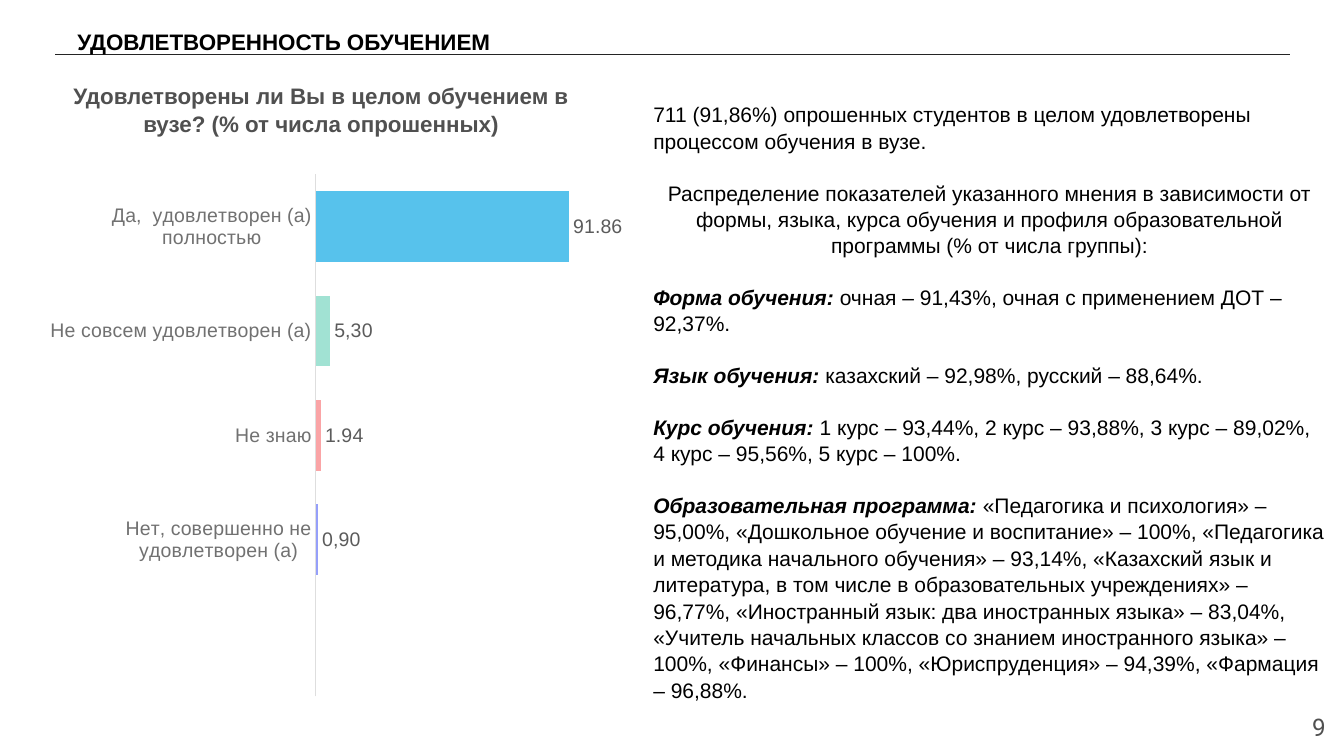
from dataclasses import dataclass

from lxml.etree import SubElement
from pptx import Presentation
from pptx.chart.data import CategoryChartData
from pptx.dml.color import RGBColor
from pptx.enum.chart import XL_CHART_TYPE as ChartType
from pptx.enum.chart import XL_LABEL_POSITION as LabelPosition
from pptx.enum.chart import XL_TICK_MARK as TickMark
from pptx.enum.shapes import MSO_CONNECTOR as Connector
from pptx.enum.text import MSO_ANCHOR as Anchor
from pptx.enum.text import PP_ALIGN as Align
from pptx.oxml.ns import qn
from pptx.util import Inches, Pt


@dataclass
class Span:
    text: str
    size: float = 15
    bold: bool = False
    italic: bool = False
    color: str = "000000"
    font: str = "Arial"


@dataclass
class Para:
    spans: list[Span]
    align: Align = Align.LEFT
    before: float = 0


@dataclass
class TextBlock:
    left: float
    top: float
    width: float
    height: float
    paras: list[Para]
    inset: float = 0.13
    anchor: Anchor = Anchor.TOP
    spacing: float = 1.05


@dataclass
class Bar:
    answer: str
    value: float | None
    color: str = ""
    label: str = ""


def rgb(value: str) -> RGBColor:
    return RGBColor.from_string(value)


def style_font(font, size: float, color: str, name: str = "Arial") -> None:
    font.size, font.name = Pt(size), name
    font.color.rgb = rgb(color)


def add_text(page, block: TextBlock) -> None:
    box = page.shapes.add_textbox(*map(Inches, (block.left, block.top, block.width, block.height)))
    frame = box.text_frame
    frame.word_wrap = True
    frame.vertical_anchor = block.anchor
    frame.margin_left = frame.margin_right = Inches(block.inset)
    frame.margin_top = frame.margin_bottom = Inches(min(block.inset, block.inset if block.inset > 0.1 else 0.05))
    for index, item in enumerate(block.paras):
        para = frame.paragraphs[0] if index == 0 else frame.add_paragraph()
        para.alignment = item.align
        para.line_spacing = block.spacing
        para.space_before = Pt(item.before)
        for span in item.spans:
            run = para.add_run()
            run.text = span.text
            style_font(run.font, span.size, span.color, span.font)
            run.font.bold, run.font.italic = span.bold, span.italic


def add_rule(page, left: float, right: float, y: float) -> None:
    rule = page.shapes.add_connector(Connector.STRAIGHT, *map(Inches, (left, y, right, y)))
    rule.line.color.rgb = rgb("242424")
    rule.line.width = Pt(0.75)
    SubElement(rule._element.spPr, qn("a:effectLst"))


def set_plot_layout(chart, **fractions: float) -> None:
    plot_area = chart._chartSpace.chart.plotArea
    layout = plot_area.find(qn("c:layout"))
    if layout is None:
        layout = SubElement(plot_area, qn("c:layout"))
        plot_area.insert(0, layout)
    manual = SubElement(layout, qn("c:manualLayout"))
    settings = {"layoutTarget": "inner", "xMode": "edge", "yMode": "edge", **fractions}
    for tag, value in settings.items():
        SubElement(manual, qn(f"c:{tag}")).set("val", str(value))


def add_bars(page, bars: list[Bar]) -> None:
    data = CategoryChartData()
    data.categories = [bar.answer for bar in bars]
    data.add_series("Series 1", [bar.value for bar in bars])
    chart = page.shapes.add_chart(
        ChartType.BAR_CLUSTERED, *map(Inches, (0.5, 1.67, 5.69, 5.33)), data
    ).chart
    chart.has_legend = chart.has_title = False
    style_font(chart.font, 10, "242424")
    set_plot_layout(chart, x=0.459, y=0.011, w=0.484, h=0.972)

    # Axes
    answers, scale = chart.category_axis, chart.value_axis
    answers.major_tick_mark = answers.minor_tick_mark = TickMark.NONE
    style_font(answers.tick_labels.font, 14, "717171")
    answers.format.line.color.rgb = rgb("DEDEDE")
    answers.format.line.width = Pt(0.75)
    scale.minimum_scale, scale.maximum_scale = 0, 100
    scale.has_major_gridlines = False
    scale.visible = False

    # Bars and their labels
    plot = chart.plots[0]
    plot.gap_width = 48
    plot.vary_by_categories = False
    series = plot.series[0]
    series.format.fill.solid()
    series.format.fill.fore_color.rgb = rgb("62CFB5")
    labels = series.data_labels
    labels.show_value = True
    labels.position = LabelPosition.OUTSIDE_END
    style_font(labels.font, 14, "5B5B5B")
    for index, bar in enumerate(bars):
        if bar.color:
            fill = series.points[index].format.fill
            fill.solid()
            fill.fore_color.rgb = rgb(bar.color)
        if bar.label:
            label = series.points[index].data_label
            run = label.text_frame.paragraphs[0].add_run()
            run.text = bar.label
            style_font(run.font, 14, "5B5B5B")
            label.position = LabelPosition.OUTSIDE_END


BARS = [
    Bar("", None),
    Bar("Нет, совершенно не удовлетворен (а)", 0.9, "959FFA", "0,90"),
    Bar("Не знаю", 1.94, "FAA4A6"),
    Bar("Не совсем удовлетворен (а)", 5.3, "A1E2D3", "5,30"),
    Bar("Да,  удовлетворен (а) полностью", 91.86, "57C2EC"),
]

GROUPS = {
    "Форма обучения: ": "очная – 91,43%, очная с применением ДОТ – 92,37%.",
    "Язык обучения: ": "казахский – 92,98%, русский – 88,64%.",
    "Курс обучения: ": "1 курс – 93,44%, 2 курс – 93,88%, 3 курс – 89,02%, "
    "4 курс – 95,56%, 5 курс – 100%.",
    "Образовательная программа: ": "«Педагогика и психология» – 95,00%, "
    "«Дошкольное обучение и воспитание» – 100%, «Педагогика и методика начального "
    "обучения» – 93,14%, «Казахский язык и литература, в том числе в образовательных "
    "учреждениях» – 96,77%, «Иностранный язык: два иностранных языка» – 83,04%, "
    "«Учитель начальных классов со знанием иностранного языка» – 100%, «Финансы» – 100%, "
    "«Юриспруденция» – 94,39%, «Фармация – 96,88%.",
}
GAP = 18

FINDINGS = [
    Para([Span("711 (91,86%) опрошенных студентов в целом удовлетворены процессом обучения в вузе.")]),
    Para([Span("Распределение показателей указанного мнения в зависимости от формы, языка, "
               "курса обучения и профиля образовательной программы (% от числа группы):")],
         Align.CENTER, GAP),
    *(Para([Span(name, bold=True, italic=True), Span(shares)], before=GAP)
      for name, shares in GROUPS.items()),
]

BLOCKS = [
    TextBlock(0.67, 0, 4.84, 0.59, [Para([Span("УДОВЛЕТВОРЕННОСТЬ ОБУЧЕНИЕМ", 16, True)])],
              inset=0.1, anchor=Anchor.BOTTOM, spacing=1),
    TextBlock(0.5, 0.67, 5.37, 0.81, [Para([Span(
        "Удовлетворены ли Вы в целом обучением в вузе? (% от числа опрошенных)",
        16, True, color="505050")], Align.CENTER)]),
    TextBlock(6.35, 0.87, 6.93, 6.07, FINDINGS),
    TextBlock(12.48, 6.93, 0.8, 0.57, [Para([Span("9", 17.3, color="505050", font="Roboto")], Align.RIGHT)],
              anchor=Anchor.MIDDLE, spacing=1),
]


def main() -> None:
    deck = Presentation()
    deck.slide_width, deck.slide_height = Inches(13.33), Inches(7.5)
    page = deck.slides.add_slide(deck.slide_layouts[6])
    add_rule(page, 0.55, 12.79, 0.54)
    add_bars(page, BARS)
    for block in BLOCKS:
        add_text(page, block)
    deck.save("out.pptx")


if __name__ == "__main__":
    main()
